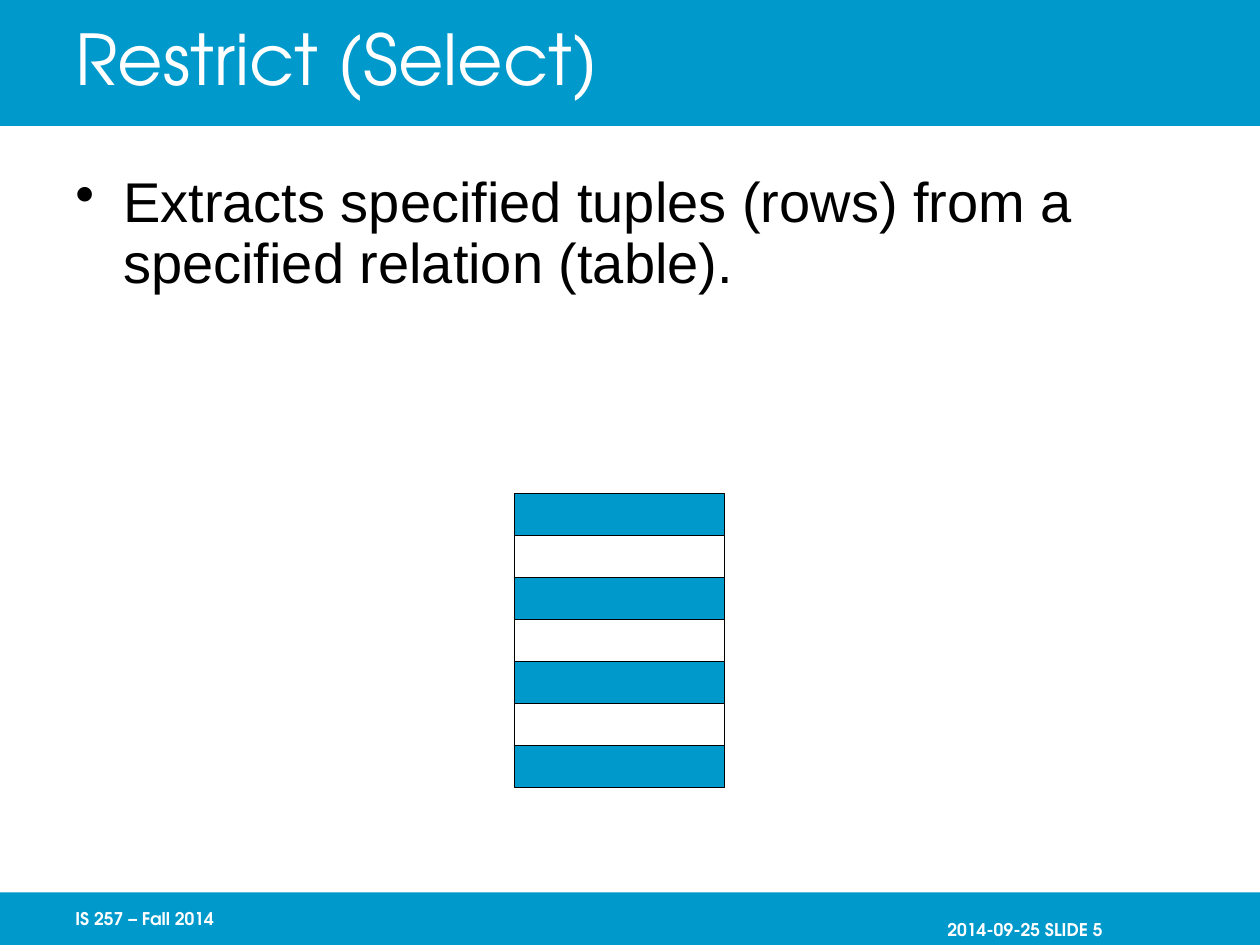
import pptx
import pptx.util
import pptx.dml.color
import pptx.enum.shapes
import pptx.enum.text
import lxml.etree

hues = {"blue": "0099CC", "white": "FFFFFF", "black": "000000"}
anchor = pptx.enum.text.MSO_ANCHOR
align = pptx.enum.text.PP_ALIGN
head = "TeX Gyre Adventor"

deck = pptx.Presentation()
deck.slide_width = pptx.util.Inches(10)
deck.slide_height = pptx.util.Inches(7.5)
slide = deck.slides.add_slide(deck.slide_layouts[6])
unit = deck.slide_width / 120


def block(col, row, wide, high, fill, edge=None):
    spot = [round(n * unit) for n in (col, row, wide, high)]
    shape = slide.shapes.add_shape(pptx.enum.shapes.MSO_SHAPE.RECTANGLE, *spot)
    shape.shadow.inherit = False
    shape.fill.solid()
    shape.fill.fore_color.rgb = pptx.dml.color.RGBColor.from_string(hues[fill])
    if edge:
        shape.line.color.rgb = pptx.dml.color.RGBColor.from_string(hues[edge])
        shape.line.width = pptx.util.Pt(0.75)
    else:
        shape.line.fill.background()


def write(col, row, wide, high, text, face, size, hue, mid=True, right=0.1):
    spot = [round(n * unit) for n in (col, row, wide, high)]
    frame = slide.shapes.add_textbox(*spot).text_frame
    frame.word_wrap = True
    frame.margin_right = pptx.util.Inches(right)
    frame.vertical_anchor = anchor.MIDDLE if mid else anchor.TOP
    frame.text = text
    para = frame.paragraphs[0]
    font = para.runs[0].font
    font.name = face
    font.size = pptx.util.Pt(size)
    font.color.rgb = pptx.dml.color.RGBColor.from_string(hues[hue])
    return para


block(0, 0, 120, 12, "blue")
block(0, 85, 120, 5, "blue")

date = write(80, 86.5, 25, 4, "2014-09-25 SLIDE 5", head, 10, "white", right=0)
date.alignment = align.RIGHT
term = write(6, 85, 25, 5, "IS 257 – Fall 2014", head, 10, "white", right=0)
for note in (date, term):
    note.runs[0].font.bold = True

title = write(6, 0, 102, 12, "Restrict (Select)", head, 40, "white")
point = write(6, 16, 108, 65,
              "Extracts specified tuples (rows) from a specified relation (table).",
              "Arial", 32, "black", mid=False)
for para in (title, point):
    para.line_spacing = 0.9

props = point._p.get_or_add_pPr()
dent = pptx.util.Inches(0.38)
props.set("marL", str(dent))
props.set("indent", str(-dent))
mark = lxml.etree.SubElement(props, pptx.oxml.ns.qn("a:buChar"))
mark.set("char", "•")

block(49, 47, 20, 28, "blue", "black")
for step in range(3):
    block(49, 51 + 8 * step, 20, 4, "white", "black")

deck.save("out.pptx")
